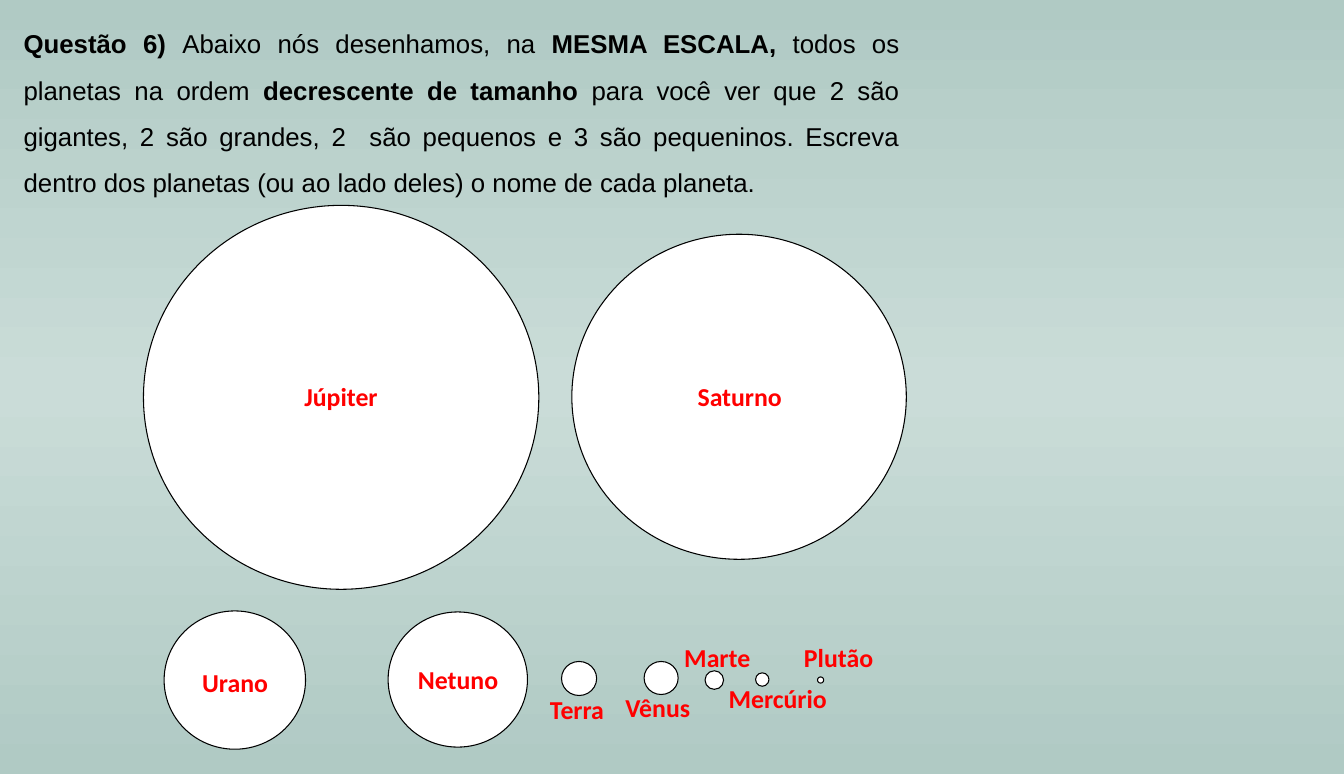
"""Build a slide that names the planets drawn in decreasing order of size."""
from copy import deepcopy

from pptx import Presentation
from pptx.dml.color import RGBColor
from pptx.enum.shapes import MSO_SHAPE
from pptx.enum.text import MSO_AUTO_SIZE, PP_ALIGN
from pptx.util import Inches, Pt

OVAL = MSO_SHAPE.OVAL
FIT_SHAPE = MSO_AUTO_SIZE.SHAPE_TO_FIT_TEXT
JUSTIFY = PP_ALIGN.JUSTIFY

COLORS = {
    "edge": "B0CAC4",
    "middle": "CADCD8",
    "planet": "FFFFFF",
    "ink": "000000",
    "answer": "FF0000",
}
BACKGROUND_STOPS = [(0, "edge"), (0.5, "middle"), (1, "edge")]

QUESTION_BOX = (0.13, 0.07, 8.68, 1.92)
QUESTION = [
    ("Questão 6) ", True),
    ("Abaixo nós desenhamos, na ", False),
    ("MESMA ESCALA,", True),
    (" todos os planetas na ordem ", False),
    ("decrescente de tamanho ", True),
    ("para você ver que 2 são gigantes, 2 são grandes, 2  são pequenos e 3 são "
     "pequeninos. Escreva dentro dos planetas (ou ao lado deles) o nome de cada "
     "planeta.", False),
]

LABEL_HEIGHT = 0.4
PLANETS = [
    ("Júpiter", (1.39, 1.99, 3.83, 3.72), (2.85, 3.64, 0.92)),
    ("Saturno", (5.54, 2.27, 3.24, 3.15), (6.66, 3.64, 1.03)),
    ("Urano", (1.59, 5.92, 1.37, 1.34), (1.86, 6.41, 0.85)),
    ("Netuno", (3.76, 5.93, 1.35, 1.31), (3.95, 6.38, 0.99)),
    ("Terra", (5.44, 6.41, 0.34, 0.33), (5.23, 6.67, 0.73)),
    ("Vênus", (6.24, 6.41, 0.33, 0.32), (5.96, 6.65, 0.83)),
    ("Marte", (6.83, 6.5, 0.18, 0.18), (6.53, 6.17, 0.85)),
    ("Mercúrio", (7.32, 6.52, 0.13, 0.13), (6.96, 6.57, 1.16)),
    ("Plutão", (7.92, 6.56, 0.06, 0.06), (7.69, 6.17, 0.88)),
]


def color(name):
    """Return the named colour."""
    return RGBColor.from_string(COLORS[name])


def paint_background(slide):
    """Give the slide its vertical three-stop gradient."""
    fill = slide.background.fill
    fill.gradient()
    fill.gradient_angle = 90
    first_stop = next(slide.element.iter("{*}gs"))
    first_stop.addnext(deepcopy(first_stop))
    for stop, (position, name) in zip(fill.gradient_stops, BACKGROUND_STOPS):
        stop.position = position
        stop.color.rgb = color(name)


def add_planet(group, box):
    """Add one outlined disc."""
    shape = group.shapes.add_shape(OVAL, *map(Inches, box))
    shape.shadow.inherit = False
    shape.fill.solid()
    shape.fill.fore_color.rgb = color("planet")
    shape.line.color.rgb = color("ink")
    shape.line.width = Pt(0.75)


def add_text(slide, box, runs, font_name, color_name, wrap):
    """Add a text box of (text, bold) runs and return its paragraph."""
    frame = slide.shapes.add_textbox(*map(Inches, box)).text_frame
    frame.word_wrap = wrap
    frame.auto_size = FIT_SHAPE
    paragraph = frame.paragraphs[0]
    paragraph.font.name = font_name
    paragraph.font.size = Pt(18)
    paragraph.font.color.rgb = color(color_name)
    for text, bold in runs:
        run = paragraph.add_run()
        run.text = text
        run.font.bold = bold
    return paragraph


def main():
    """Build and save the slide."""
    presentation = Presentation()
    presentation.slide_width = Inches(13.02)
    presentation.slide_height = Inches(7.5)
    slide = presentation.slides.add_slide(presentation.slide_layouts[6])
    paint_background(slide)

    planets = slide.shapes.add_group_shape()
    for _, disc, _ in PLANETS:
        add_planet(planets, disc)

    question = add_text(slide, QUESTION_BOX, QUESTION, "Arial", "ink", True)
    question.alignment = JUSTIFY
    question.line_spacing = 1.5

    for name, _, label in PLANETS:
        add_text(slide, (*label, LABEL_HEIGHT), [(name, True)], "Calibri", "answer", False)

    presentation.save("out.pptx")


if __name__ == "__main__":
    main()
